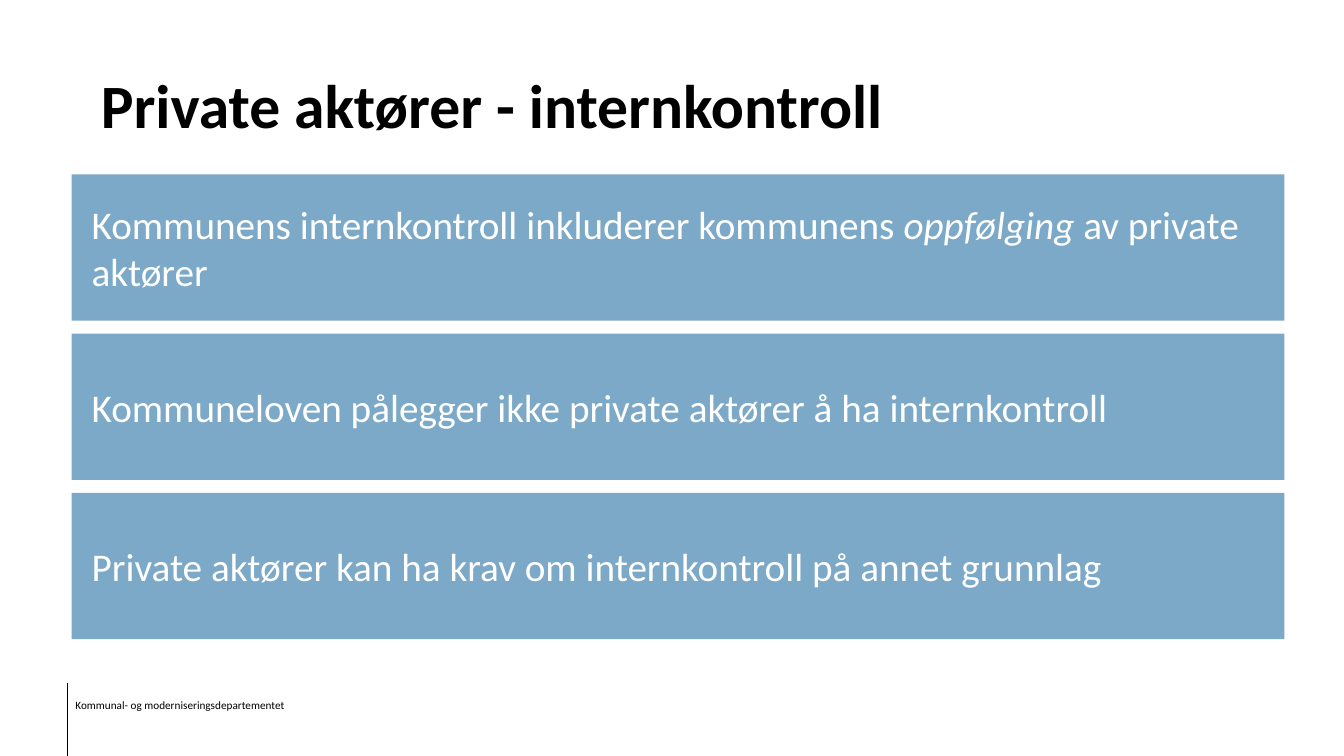
"""Build the slide on internal control and private actors."""
from pptx import Presentation
from pptx.dml.color import RGBColor
from pptx.enum import shapes, text
from pptx.oxml.xmlchemy import OxmlElement
from pptx.util import Inches, Pt

HEADING = "Private aktører - internkontroll"
DEPARTMENT = "Kommunal- og moderniseringsdepartementet"
STATEMENTS = [
    [("Kommunens internkontroll inkluderer kommunens ", False),
     ("oppfølging", True), (" av private aktører", False)],
    [("Kommuneloven pålegger ikke private aktører å ha internkontroll", False)],
    [("Private aktører kan ha krav om internkontroll på annet grunnlag", False)],
]
BLACK, WHITE, BLUE = "000000", "FFFFFF", "7BA9C7"
BAR_LEFT, BAR_TOP, BAR_WIDTH, BAR_HEIGHT, BAR_STEP = 0.71, 1.73, 12.03, 1.45, 1.58


def color(value):
    return RGBColor.from_string(value)


def place(part, left, top, width, height):
    part.left, part.top = Inches(left), Inches(top)
    part.width, part.height = Inches(width), Inches(height)


def write(frame, runs, size, fill=BLACK, bold=False, spacing=1.0,
          anchor=text.MSO_ANCHOR.TOP, inset=0.1):
    frame.word_wrap = True
    frame.auto_size = text.MSO_AUTO_SIZE.NONE
    frame.vertical_anchor = anchor
    frame.margin_left = Inches(inset)
    line = frame.paragraphs[0]
    line.alignment = text.PP_ALIGN.LEFT
    line.line_spacing = spacing
    for words, italic in runs:
        run = line.add_run()
        run.text = words
        font = run.font
        font.name, font.size = "Calibri", Pt(size)
        font.bold, font.italic = bold, italic
        font.color.rgb = color(fill)


def main():
    deck = Presentation()
    deck.slide_width, deck.slide_height = Inches(13.33), Inches(7.5)
    slide = deck.slides.add_slide(deck.slide_layouts.get_by_name("Title Only"))

    department = slide.shapes.add_textbox(
        Inches(0.65), Inches(6.89), Inches(2.83), Inches(0.22))
    write(department.text_frame, [(DEPARTMENT, False)], 8, spacing=0.9)

    rule = slide.shapes.add_connector(
        shapes.MSO_CONNECTOR.STRAIGHT,
        Inches(0.67), Inches(6.78), Inches(0.67), Inches(7.5))
    rule.line.color.rgb = color(BLACK)
    rule.line.width = Pt(0.75)
    rule._element.spPr.append(OxmlElement("a:effectLst"))

    heading = slide.shapes.title
    place(heading, 0.9, 0.32, 11.09, 1.13)
    write(heading.text_frame, [(HEADING, False)], 44, bold=True,
          anchor=text.MSO_ANCHOR.BOTTOM)

    for row, statement in enumerate(STATEMENTS):
        bar = slide.shapes.add_shape(
            shapes.MSO_SHAPE.ROUNDED_RECTANGLE,
            Inches(BAR_LEFT), Inches(BAR_TOP + row * BAR_STEP),
            Inches(BAR_WIDTH), Inches(BAR_HEIGHT))
        bar.adjustments[0] = 0
        bar.shadow.inherit = False
        bar.fill.solid()
        bar.fill.fore_color.rgb = color(BLUE)
        bar.line.fill.background()
        write(bar.text_frame, statement, 28, fill=WHITE,
              anchor=text.MSO_ANCHOR.MIDDLE, inset=0.2)

    deck.save("out.pptx")


if __name__ == "__main__":
    main()
